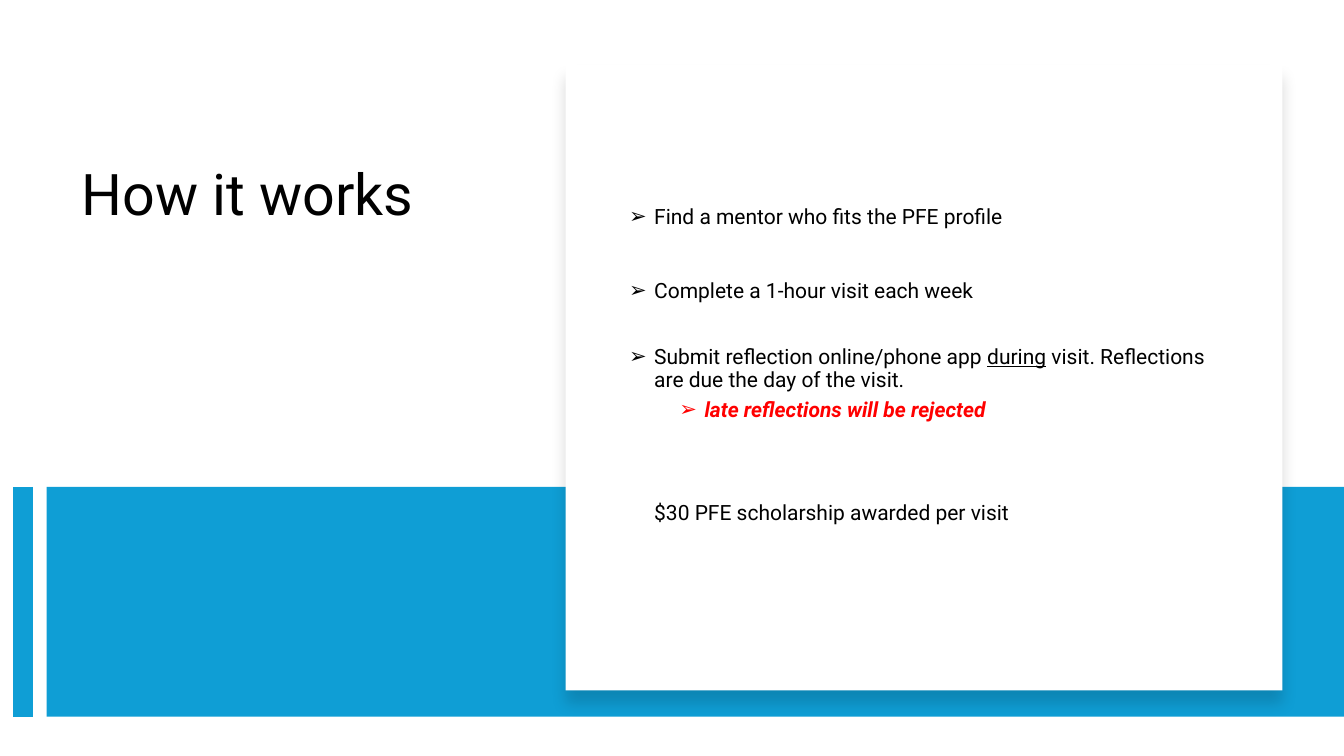
from dataclasses import dataclass
from lxml.etree import SubElement
from pptx import Presentation
from pptx.dml.color import RGBColor
from pptx.enum.shapes import MSO_CONNECTOR, MSO_SHAPE
from pptx.enum.text import MSO_ANCHOR, MSO_AUTO_SIZE, PP_ALIGN
from pptx.oxml.ns import qn
from pptx.util import Pt


@dataclass(frozen=True)
class Theme:
    font: str = "Roboto"
    ink: RGBColor = RGBColor(0, 0, 0)
    paper: RGBColor = RGBColor(255, 255, 255)
    accent: RGBColor = RGBColor.from_string("0F9ED5")
    warning: RGBColor = RGBColor(255, 0, 0)
    title_size: int = 41
    body_size: int = 15


theme = Theme()


def place(box, left, top, width, height):
    box.left, box.top, box.width, box.height = Pt(left), Pt(top), Pt(width), Pt(height)
    frame = box.text_frame
    frame.word_wrap = True
    frame.auto_size = MSO_AUTO_SIZE.NONE
    frame.vertical_anchor = MSO_ANCHOR.TOP
    return frame


def style(para, size, color):
    para.alignment = PP_ALIGN.LEFT
    para.line_spacing = 0.9
    for span in para.runs:
        span.font.name = theme.font
        span.font.size = Pt(size)
        span.font.color.rgb = color


deck = Presentation()
deck.slide_width, deck.slide_height = Pt(960), Pt(540)
page = deck.slides.add_slide(deck.slide_layouts[1])
title, body = page.placeholders

title_frame = place(title, 51.1, 115.2, 298.8, 211.7)
title_frame.text = "How it works"
style(title_frame.paragraphs[0], theme.title_size, theme.ink)

band_top, band_bottom = 347.8, 511.9
band = page.shapes.add_shape(
    MSO_SHAPE.RECTANGLE, Pt(33.3), Pt(band_top), Pt(926.7), Pt(band_bottom - band_top)
)
card = page.shapes.add_shape(MSO_SHAPE.RECTANGLE, Pt(404), Pt(46), Pt(512), Pt(447.2))
for box, color in ((band, theme.accent), (card, theme.paper)):
    box.shadow.inherit = False
    box.fill.solid()
    box.fill.fore_color.rgb = color
    box.line.fill.background()

effects = card.element.spPr.find(qn("a:effectLst"))
shadow = SubElement(
    effects, qn("a:outerShdw"),
    blurRad=str(Pt(11)), dist=str(Pt(10)), dir="5400000", algn="t", rotWithShape="0",
)
shade = SubElement(shadow, qn("a:srgbClr"), val=str(theme.ink))
SubElement(shade, qn("a:alpha"), val="15000")

stripe = page.shapes.add_connector(
    MSO_CONNECTOR.STRAIGHT, Pt(16.5), Pt(band_top), Pt(16.5), Pt(band_bottom)
)
stripe.line.color.rgb = theme.accent
stripe.line.width = Pt(14)
SubElement(stripe.element.spPr, qn("a:effectLst"))

steps = [
    (["Find a mentor who fits the PFE profile"], 0, 18, True, 0, theme.ink),
    (["Complete a 1-hour visit each week"], 0, 18, True, 37, theme.ink),
    (["Submit reflection online/phone app ", "during",
      " visit. Reflections are due the day of the visit."], 0, 18, True, 31, theme.ink),
    (["late reflections will be rejected"], 1, 54, True, 5, theme.warning),
    (["$30 PFE scholarship awarded per visit"], 1, 18, False, 57.5, theme.ink),
]

page.shapes.element.append(body.element)
body_frame = place(body, 445.7, 143.5, 436.3, 310)
body_frame.margin_left = body_frame.margin_right = Pt(3.6)
body_frame.margin_top = body_frame.margin_bottom = Pt(3.6)

for index, (parts, level, indent, bulleted, gap, color) in enumerate(steps):
    para = body_frame.add_paragraph() if index else body_frame.paragraphs[0]
    para.level = level
    properties = para._p.get_or_add_pPr()
    properties.set("marL", str(Pt(indent)))
    properties.set("indent", str(Pt(-18 if bulleted else 0)))
    if bulleted:
        SubElement(properties, qn("a:buChar"), char="➢")
    else:
        SubElement(properties, qn("a:buNone"))
    para.space_before = Pt(gap)
    for part in parts:
        span = para.add_run()
        span.text = part
        if part == "during":
            span.font.underline = True
        if color == theme.warning:
            span.font.bold = span.font.italic = True
    style(para, theme.body_size, color)

deck.save("out.pptx")
